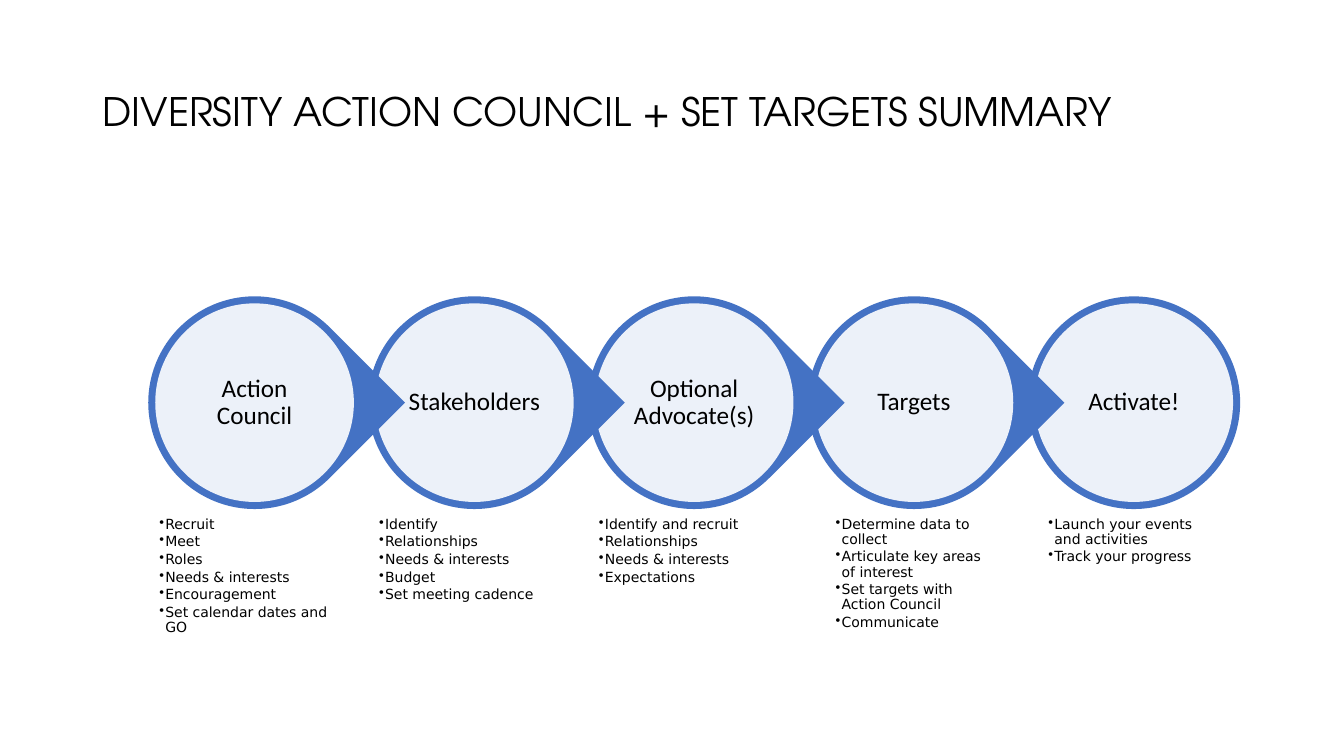
from lxml import etree
from pptx import Presentation
from pptx import util as u
from pptx.dml.color import RGBColor
from pptx.enum import shapes, text
from pptx.oxml.ns import qn

BLUE, WHITE, BLACK = "4472C4", "FFFFFF", "000000"
FIRST_LEFT, PITCH, TOP = 1.47, 2.18, 2.94
OUTER, INNER, LABEL = 2.11, 1.97, 1.41
RIM, LABEL_GAP = (OUTER - INNER) / 2, (OUTER - LABEL) / 2

# Step name, its bullets, and the bullet box: left, top, width, height, inset
STEPS = [
    ("Action Council",
     ["Recruit", "Meet", "Roles", "Needs & interests", "Encouragement",
      "Set calendar dates and GO"],
     (1.54, 5.09, 1.97, 1.16, 0.04)),
    ("Stakeholders",
     ["Identify", "Relationships", "Needs & interests", "Budget",
      "Set meeting cadence"],
     (3.72, 5.09, 1.97, 1.16, 0.04)),
    ("Optional Advocate(s)",
     ["Identify and recruit", "Relationships", "Needs & interests",
      "Expectations"],
     (5.9, 5.09, 1.97, 1.16, 0.04)),
    ("Targets",
     ["Determine data to collect", "Articulate key areas of interest",
      "Set targets with Action Council", "Communicate"],
     (8.19, 5.08, 1.77, 1.24, 0.1)),
    ("Activate!",
     ["Launch your events and activities", "Track your progress"],
     (10.3, 5.08, 1.77, 0.58, 0.1)),
]


def rgb(color):
    return RGBColor.from_string(color)


class Deck:
    def __init__(self):
        self.prs = Presentation()
        self.prs.slide_width = u.Inches(13.33)
        self.prs.slide_height = u.Inches(7.5)
        self.s = self.prs.slides.add_slide(self.prs.slide_layouts[6])

    def shape(self, kind, left, top, size, color, rotation=0, opacity=None):
        sp = self.s.shapes.add_shape(
            kind, u.Inches(left), u.Inches(top), u.Inches(size), u.Inches(size))
        sp.shadow.inherit = False
        sp.rotation = rotation
        sp.line.fill.background()
        sp.fill.solid()
        sp.fill.fore_color.rgb = rgb(color)
        if opacity is not None:
            clr = sp.fill._xPr.find(f".//{qn('a:srgbClr')}")
            etree.SubElement(clr, qn("a:alpha"), val=str(opacity * 1000))

    def text(self, lines, left, top, width, height, font, size, inset=0.1,
             align=text.PP_ALIGN.LEFT, anchor=text.MSO_ANCHOR.MIDDLE):
        sp = self.s.shapes.add_textbox(
            u.Inches(left), u.Inches(top), u.Inches(width), u.Inches(height))
        tf = sp.text_frame
        tf.word_wrap = True
        tf.vertical_anchor = anchor
        tf.margin_left = tf.margin_right = u.Inches(inset)
        tf.margin_top = tf.margin_bottom = u.Inches(min(inset, 0.05))
        tf.text = "\n".join(lines)
        for p in tf.paragraphs:
            p.alignment = align
            p.line_spacing = 0.9
            p.font.name = font
            p.font.size = u.Pt(size)
            p.font.color.rgb = rgb(BLACK)
        return tf

    def bullets(self, lines, left, top, width, height, inset):
        tf = self.text(lines, left, top, width, height, "DejaVu Sans", 10,
                       inset, anchor=text.MSO_ANCHOR.TOP)
        indent = u.Inches(0.06)
        for p in tf.paragraphs:
            p.space_after = u.Pt(1.75)
            pPr = p._p.get_or_add_pPr()
            pPr.set("marL", str(indent))
            pPr.set("indent", str(-indent))
            bullet = etree.Element(qn("a:buChar"), char="•")
            pPr.find(qn("a:defRPr")).addprevious(bullet)

    def step(self, left, name, last):
        """Draw one ringed circle; all but the last point to the right."""
        oval = shapes.MSO_SHAPE.OVAL
        if last:
            self.shape(oval, left, TOP, OUTER, BLUE)
        else:
            self.shape(shapes.MSO_SHAPE.TEAR, left, TOP, OUTER, BLUE, rotation=45)
        self.shape(oval, left + RIM, TOP + RIM, INNER, WHITE, opacity=90)
        self.text([name], left + LABEL_GAP, TOP + LABEL_GAP, LABEL, LABEL,
                  "Calibri", 18, 0.03, text.PP_ALIGN.CENTER)


def main():
    deck = Deck()
    deck.text(["DIVERSITY ACTION COUNCIL + SET TARGETS SUMMARY"],
              0.92, 0.4, 11.5, 1.45, "TeX Gyre Adventor", 28)
    # Right to left, so that each point lies over the next circle
    for i, (name, lines, box) in reversed(list(enumerate(STEPS))):
        deck.step(FIRST_LEFT + i * PITCH, name, last=i == len(STEPS) - 1)
        deck.bullets(lines, *box)
    deck.prs.save("out.pptx")


if __name__ == "__main__":
    main()
